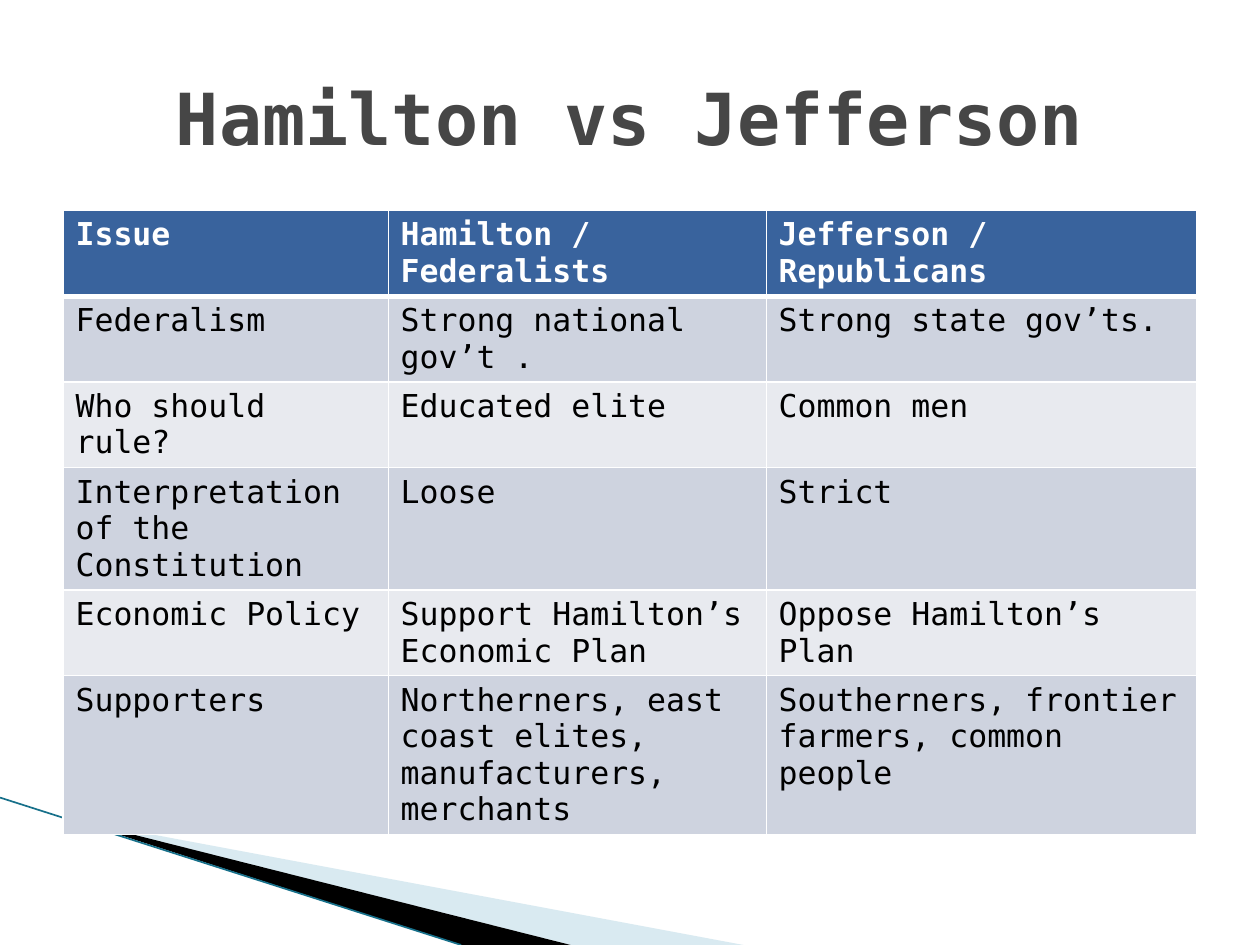
import pptx
import pptx.dml.color
import pptx.enum.shapes
import pptx.enum.text
import pptx.oxml
import pptx.oxml.ns
import pptx.util
from dataclasses import dataclass
from lxml import etree


@dataclass(frozen=True)
class Theme:
    font: str = "DejaVu Sans Mono"
    title_size: int = 41
    body_size: int = 18
    title: str = "464646"
    header: str = "39639D"
    bands: tuple = ("CED3DF", "E8EAEF")
    white: str = "FFFFFF"
    black: str = "000000"
    pale: str = "A0CBDC"
    teal: str = "17708A"
    thin: float = 0.75
    thick: float = 3


THEME = Theme()
WIDTH, HEIGHT = 10, 7.5
MARGIN = 0.05 * WIDTH
COLUMNS = (2.58, 3, 3.42)
HEADER_HEIGHT, ROW_HEIGHT = 0.36, 0.41
UNITS = 100  # freeform units to the inch

ROWS = (
    ("Issue", "Hamilton / Federalists", "Jefferson / Republicans"),
    ("Federalism", "Strong national gov’t .", "Strong state gov’ts."),
    ("Who should rule?", "Educated elite", "Common men"),
    ("Interpretation of the Constitution", "Loose", "Strict"),
    ("Economic Policy", "Support Hamilton’s Economic Plan",
     "Oppose Hamilton’s Plan"),
    ("Supporters", "Northerners, east coast elites, manufacturers, merchants",
     "Southerners, frontier farmers, common people"),
)


def inches(*values):
    return [pptx.util.Inches(v) for v in values]


def rgb(color):
    return pptx.dml.color.RGBColor.from_string(color)


def format_text(tf, size, color, bold):
    for p in tf.paragraphs:
        for r in p.runs:
            r.font.name = THEME.font
            r.font.size = pptx.util.Pt(size)
            r.font.bold = bold
            r.font.color.rgb = rgb(color)


def add_wedge(s, points, color, opacity=100):
    start, *rest = [(round(x * UNITS), round(y * UNITS)) for x, y in points]
    builder = s.shapes.build_freeform(
        *start, scale=pptx.util.Inches(1) / UNITS)
    builder.add_line_segments(rest, close=True)
    sp = builder.convert_to_shape()
    sp.shadow.inherit = False
    sp.line.fill.background()
    sp.fill.solid()
    sp.fill.fore_color.rgb = rgb(color)
    if opacity < 100:
        clr = sp._element.spPr.find(".//" + pptx.oxml.ns.qn("a:srgbClr"))
        alpha = etree.SubElement(clr, pptx.oxml.ns.qn("a:alpha"))
        alpha.set("val", str(opacity * 1000))


def add_line(s, start, end, color, width):
    line = s.shapes.add_connector(
        pptx.enum.shapes.MSO_CONNECTOR.STRAIGHT, *inches(*start, *end))
    line.line.color.rgb = rgb(color)
    line.line.width = pptx.util.Pt(width)
    etree.SubElement(line._element.spPr, pptx.oxml.ns.qn("a:effectLst"))


def set_borders(cell, color, top, bottom):
    tc_pr = cell._tc.get_or_add_tcPr()
    sides = {"L": THEME.thin, "R": THEME.thin, "T": top, "B": bottom}
    for side, width in sides.items():
        tc_pr.append(pptx.oxml.parse_xml(
            f'<a:ln{side} {pptx.oxml.ns.nsdecls("a")} w="{pptx.util.Pt(width)}">'
            f'<a:solidFill><a:srgbClr val="{color}"/></a:solidFill></a:ln{side}>'))


def format_cell(cell, text, row):
    header = row == 0
    set_borders(cell, THEME.white,
                THEME.thick if row == 1 else THEME.thin,
                THEME.thick if header else THEME.thin)
    cell.fill.solid()
    cell.fill.fore_color.rgb = rgb(
        THEME.header if header else THEME.bands[(row - 1) % 2])
    cell.text_frame.text = text
    format_text(cell.text_frame, THEME.body_size,
                THEME.white if header else THEME.black, header)


def add_comparison(s, top):
    height = HEADER_HEIGHT + ROW_HEIGHT * (len(ROWS) - 1)
    table = s.shapes.add_table(
        len(ROWS), len(COLUMNS),
        *inches(MARGIN, top, sum(COLUMNS), height)).table
    for column, width in zip(table.columns, COLUMNS):
        column.width = pptx.util.Inches(width)
    for i, texts in enumerate(ROWS):
        table.rows[i].height = pptx.util.Inches(
            ROW_HEIGHT if i else HEADER_HEIGHT)
        for j, text in enumerate(texts):
            format_cell(table.cell(i, j), text, i)


def set_title(s, text):
    sp = s.shapes.title
    sp.left, sp.top, sp.width, sp.height = inches(
        MARGIN, 0.3, WIDTH - 2 * MARGIN, 1.25)
    tf = sp.text_frame
    tf.text = text
    tf.word_wrap = True
    tf.auto_size = pptx.enum.text.MSO_AUTO_SIZE.NONE
    tf.vertical_anchor = pptx.enum.text.MSO_ANCHOR.MIDDLE
    tf.paragraphs[0].alignment = pptx.enum.text.PP_ALIGN.CENTER
    format_text(tf, THEME.title_size, THEME.title, True)


def main():
    prs = pptx.Presentation()
    prs.slide_width, prs.slide_height = inches(WIDTH, HEIGHT)
    s = prs.slides.add_slide(prs.slide_layouts[5])
    set_title(s, "Hamilton vs Jefferson")

    # Corner decoration, behind the table
    add_wedge(s, [(0.55, 6.5), (5.9, HEIGHT), (4.53, HEIGHT)], THEME.pale, 40)
    add_wedge(s, [(0.53, 6.49), (4.53, HEIGHT), (3.66, HEIGHT)], THEME.black)
    add_line(s, (0, 6.33), (3.66, HEIGHT), THEME.teal, 0.95)

    # Comparison table
    add_comparison(s, 1.67)
    prs.save("out.pptx")


if __name__ == "__main__":
    main()
